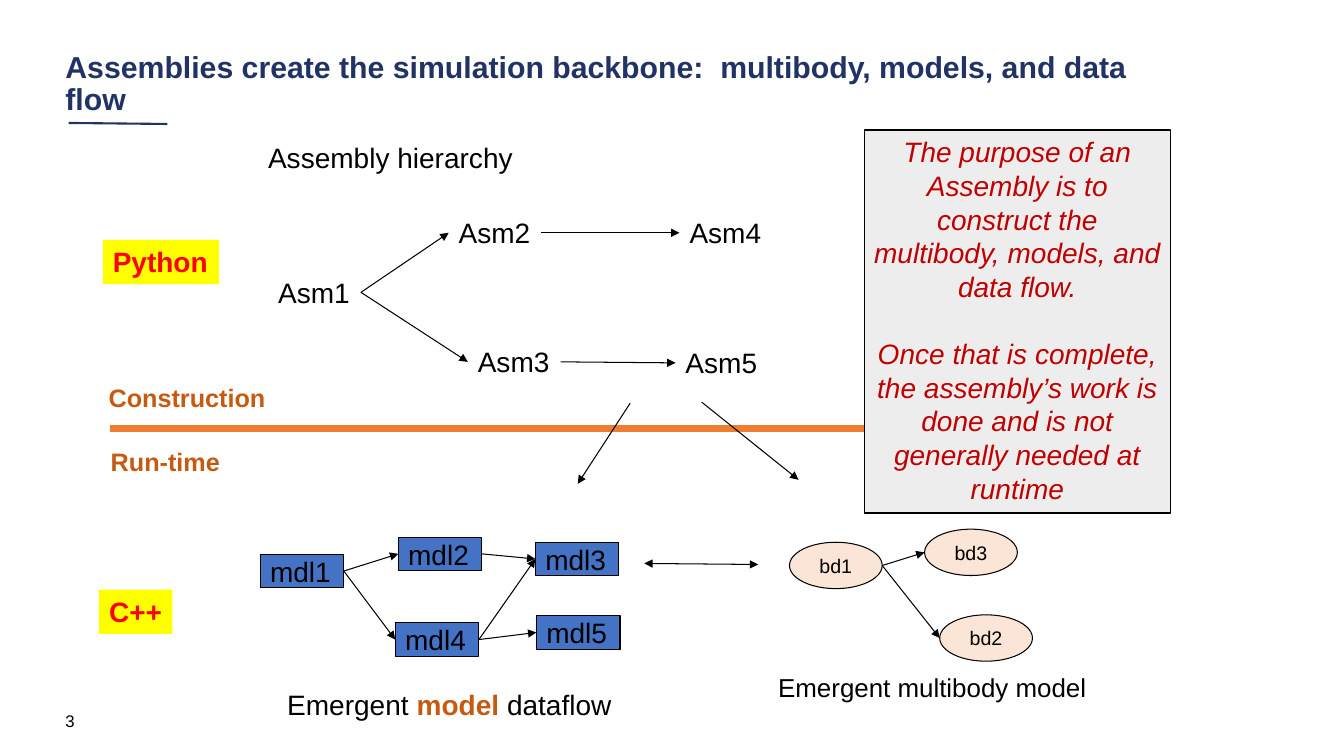
from dataclasses import dataclass

from lxml.etree import SubElement
from pptx import Presentation
from pptx.dml.color import RGBColor
from pptx.enum.shapes import MSO_CONNECTOR, MSO_SHAPE
from pptx.enum.text import MSO_ANCHOR, MSO_AUTO_SIZE, PP_ALIGN
from pptx.oxml.ns import qn
from pptx.shapes.autoshape import Shape
from pptx.shapes.connector import Connector
from pptx.slide import Slide
from pptx.util import Inches, Pt


@dataclass(frozen=True)
class Theme:
    font: str = "Arial"
    black: str = "000000"
    navy: str = "213265"
    orange: str = "ED7D31"
    rust: str = "C55A11"
    red: str = "FF0000"
    crimson: str = "C00000"
    yellow: str = "FFFF00"
    blue: str = "4472C4"
    peach: str = "FBE5D6"
    gray: str = "EDEDED"
    title_size: float = 21.6
    text_size: float = 20
    caption_size: float = 18.5
    phase_size: float = 18
    body_size: float = 14
    number_size: float = 12
    thin: float = 0.75


THEME = Theme()


@dataclass(frozen=True)
class Label:
    """A block of text; each paragraph is a string or a tuple of runs."""
    paragraphs: tuple
    left: float
    top: float
    width: float
    height: float
    size: float = THEME.text_size
    color: str = THEME.black
    bold: bool = False
    italic: bool = False
    centered: bool = False
    middle: bool = False
    wrap: bool = False
    grow: bool = False
    line_spacing: float | None = None
    geometry: MSO_SHAPE | None = None
    fill: str | None = None
    outlined: bool = False


@dataclass(frozen=True)
class Stroke:
    start: tuple[float, float]
    end: tuple[float, float]
    color: str = THEME.black
    width: float = THEME.thin
    head: bool = False
    tail: bool = True


def rgb(value: str) -> RGBColor:
    return RGBColor.from_string(value)


def add_label(slide: Slide, label: Label) -> Shape:
    box = [Inches(v) for v in (label.left, label.top, label.width, label.height)]
    if label.geometry is None:
        shape = slide.shapes.add_textbox(*box)
    else:
        shape = slide.shapes.add_shape(label.geometry, *box)
        shape.shadow.inherit = False
        shape.fill.solid()
        shape.fill.fore_color.rgb = rgb(label.fill)
        if label.outlined:
            shape.line.color.rgb = rgb(THEME.black)
            shape.line.width = Pt(THEME.thin)
        else:
            shape.line.fill.background()
    frame = shape.text_frame
    frame.word_wrap = label.wrap
    frame.auto_size = MSO_AUTO_SIZE.SHAPE_TO_FIT_TEXT if label.grow else MSO_AUTO_SIZE.NONE
    frame.vertical_anchor = MSO_ANCHOR.MIDDLE if label.middle else MSO_ANCHOR.TOP
    for index, text in enumerate(label.paragraphs):
        paragraph = frame.add_paragraph() if index else frame.paragraphs[0]
        if index:
            paragraph.space_before = Pt(label.size * 1.2)
        paragraph.alignment = PP_ALIGN.CENTER if label.centered else PP_ALIGN.LEFT
        if label.line_spacing:
            paragraph.line_spacing = label.line_spacing
        font = paragraph.font
        font.name, font.size = THEME.font, Pt(label.size)
        font.bold, font.italic = label.bold, label.italic
        font.color.rgb = rgb(label.color)
        for part in (text,) if isinstance(text, str) else text:
            paragraph.add_run().text = part
    return shape


def add_stroke(slide: Slide, stroke: Stroke) -> Connector:
    ends = [Inches(v) for v in (*stroke.start, *stroke.end)]
    connector = slide.shapes.add_connector(MSO_CONNECTOR.STRAIGHT, *ends)
    connector.line.color.rgb = rgb(stroke.color)
    connector.line.width = Pt(stroke.width)
    properties = connector._element.spPr
    line = properties.find(qn("a:ln"))
    for tag, wanted in (("a:headEnd", stroke.head), ("a:tailEnd", stroke.tail)):
        if wanted:
            SubElement(line, qn(tag), type="triangle")
    SubElement(properties, qn("a:effectLst"))
    return connector


def link_nodes(slide: Slide, labels: dict[str, Label], links: list[tuple[str, str]]) -> None:
    """Draw the nodes, then an arrow from right side to left side for each link."""
    shapes = {name: add_label(slide, label) for name, label in labels.items()}
    for source, target in links:
        first, last = labels[source], labels[target]
        connector = add_stroke(slide, Stroke(
            (first.left + first.width, first.top + first.height / 2),
            (last.left, last.top + last.height / 2)))
        if first.geometry != MSO_SHAPE.OVAL:
            connector.begin_connect(shapes[source], 3)
            connector.end_connect(shapes[target], 1)


def make_nodes(places: dict[str, tuple[float, float]], width: float, height: float,
               **style) -> dict[str, Label]:
    return {name: Label((name,), left, top, width, height, **style)
            for name, (left, top) in places.items()}


ASSEMBLIES = make_nodes(
    {"Asm1": (2.66, 2.68), "Asm2": (4.45, 2.09), "Asm3": (4.64, 3.37),
     "Asm4": (6.74, 2.09), "Asm5": (6.7, 3.38)}, 0.92, 0.44, grow=True)
ASSEMBLY_LINKS = [("Asm1", "Asm2"), ("Asm1", "Asm3"), ("Asm2", "Asm4"), ("Asm3", "Asm5")]

MODELS = make_nodes(
    {"mdl1": (2.58, 5.5), "mdl2": (3.95, 5.33), "mdl3": (5.31, 5.38),
     "mdl4": (3.92, 6.18), "mdl5": (5.32, 6.11)}, 0.83, 0.33,
    geometry=MSO_SHAPE.RECTANGLE, fill=THEME.blue, outlined=True, middle=True)
MODEL_LINKS = [("mdl1", "mdl2"), ("mdl1", "mdl4"), ("mdl4", "mdl3"),
               ("mdl4", "mdl5"), ("mdl2", "mdl3")]

BODIES = make_nodes(
    {"bd1": (7.83, 5.38), "bd2": (9.32, 6.1), "bd3": (9.17, 5.25)}, 0.92, 0.46,
    size=THEME.body_size, geometry=MSO_SHAPE.OVAL, fill=THEME.peach,
    outlined=True, middle=True, centered=True)
BODY_LINKS = [("bd1", "bd3"), ("bd1", "bd2")]

STROKES = [
    Stroke((0.68, 1.22), (1.66, 1.23), THEME.navy, 1.5, tail=False),
    Stroke((1.09, 4.25), (10.08, 4.25), THEME.orange, 4.5, tail=False),
    Stroke((6.39, 5.59), (7.52, 5.6), head=True),
    Stroke((6.25, 4), (5.73, 4.8)),
    Stroke((6.96, 3.99), (7.92, 4.76)),
]

TITLE = "Assemblies create the simulation backbone:  multibody, models, and data flow"
PURPOSE = ("The purpose of an Assembly is to construct the multibody, models, and data flow.",
           "Once that is complete, the assembly’s work is done and is not generally "
           "needed at runtime")
PHASE = dict(size=THEME.phase_size, color=THEME.rust, bold=True, grow=True)
LANGUAGE = dict(color=THEME.red, bold=True, grow=True,
                geometry=MSO_SHAPE.RECTANGLE, fill=THEME.yellow)
LABELS = [
    Label((TITLE,), 0.55, 0.46, 11.12, 0.76, THEME.title_size, THEME.navy, bold=True,
          middle=True, wrap=True, line_spacing=0.9),
    Label(("3",), 0.55, 6.95, 3, 0.4, THEME.number_size, middle=True, wrap=True),
    Label(("Assembly hierarchy",), 2.56, 1.34, 2.65, 0.44, grow=True),
    Label(("Construction",), 0.98, 3.74, 1.77, 0.4, **PHASE),
    Label(("Run-time",), 1, 4.38, 1.3, 0.4, **PHASE),
    Label(("Python",), 1.02, 2.38, 1.15, 0.44, **LANGUAGE),
    Label(("C++",), 0.98, 5.85, 0.73, 0.44, centered=True, **LANGUAGE),
    Label(("Emergent multibody model",), 7.62, 6.67, 3.84, 0.5, THEME.caption_size,
          wrap=True, line_spacing=0.8),
    Label(PURPOSE, 8.57, 1.29, 3.04, 3.8, color=THEME.crimson, italic=True, centered=True,
          wrap=True, grow=True, geometry=MSO_SHAPE.RECTANGLE, fill=THEME.gray, outlined=True),
]
DATAFLOW = Label((("Emergent ", "model", " dataflow"),), 2.75, 6.77, 3.64, 0.5, wrap=True)


def main() -> None:
    presentation = Presentation()
    presentation.slide_width, presentation.slide_height = Inches(13.33), Inches(7.5)
    slide = presentation.slides.add_slide(presentation.slide_layouts[6])
    for stroke in STROKES:
        add_stroke(slide, stroke)
    link_nodes(slide, ASSEMBLIES, ASSEMBLY_LINKS)
    link_nodes(slide, MODELS, MODEL_LINKS)
    link_nodes(slide, BODIES, BODY_LINKS)
    for label in LABELS:
        add_label(slide, label)
    model_font = add_label(slide, DATAFLOW).text_frame.paragraphs[0].runs[1].font
    model_font.bold = True
    model_font.color.rgb = rgb(THEME.rust)
    presentation.save("out.pptx")


if __name__ == "__main__":
    main()
